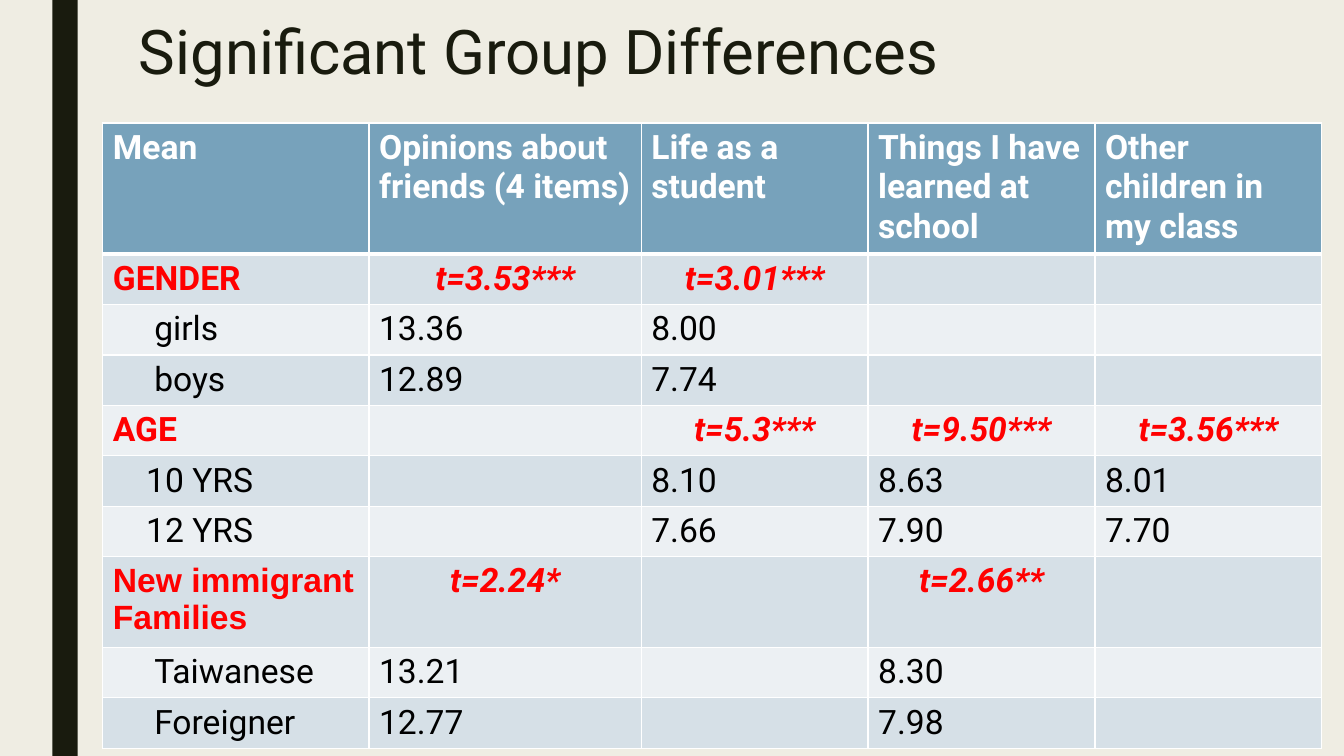
from pptx import Presentation
from pptx.dml.color import RGBColor
from pptx.enum.shapes import MSO_SHAPE
from pptx.enum.text import PP_ALIGN
from pptx.oxml import parse_xml
from pptx.oxml.ns import nsdecls
from pptx.util import Inches, Pt

RECT = MSO_SHAPE.RECTANGLE
LEFT, CENTER = PP_ALIGN.LEFT, PP_ALIGN.CENTER

CREAM = RGBColor(0xEF, 0xED, 0xE3)
INK = RGBColor(0x19, 0x1B, 0x0E)
BLUE = RGBColor(0x77, 0xA2, 0xBB)
BANDS = (RGBColor(0xEC, 0xF0, 0xF3), RGBColor(0xD6, 0xE0, 0xE7))
WHITE = RGBColor(0xFF, 0xFF, 0xFF)
BLACK = RGBColor(0, 0, 0)
RED = RGBColor(0xFF, 0, 0)

COLUMN_WIDTHS = (2.64, 2.7, 2.25, 2.25, 2.25)
HEADER_HEIGHT, ROW_HEIGHT, TALL_HEIGHT = 1.26, 0.49, 0.84
HEADER = ("Mean", "Opinions about friends (4 items)", "Life as a student",
          "Things I have learned at school", "Other children in my class")
GROUPS = (
    (("GENDER", "t=3.53***", "t=3.01***", "", ""), "Roboto", ROW_HEIGHT, 0.41,
     (("girls", "13.36", "8.00", "", ""),
      ("boys", "12.89", "7.74", "", ""))),
    (("AGE", "", "t=5.3***", "t=9.50***", "t=3.56***"), "Roboto", ROW_HEIGHT, 0.33,
     (("10 YRS", "", "8.10", "8.63", "8.01"),
      ("12 YRS", "", "7.66", "7.90", "7.70"))),
    (("New immigrant Families", "t=2.24*", "", "t=2.66**", ""), "Arial", TALL_HEIGHT, 0.41,
     (("Taiwanese", "13.21", "", "8.30", ""),
      ("Foreigner", "12.77", "", "7.98", ""))),
)


class SlideBuilder:
    """Draws styled elements on one slide."""

    def __init__(self, slide, font="Roboto"):
        self.s = slide
        self.font = font
        fill = slide.background.fill
        fill.solid()
        fill.fore_color.rgb = CREAM

    def text(self, tf, text, size, color, bold=False, italic=False, align=LEFT, font=None):
        p = tf.paragraphs[0]
        p.text = text
        p.alignment = align
        f = p.font
        f.name, f.size, f.bold, f.italic = font or self.font, Pt(size), bold, italic
        f.color.rgb = color
        return p

    def bar(self, x, y, w, h, color):
        sp = self.s.shapes.add_shape(RECT, Inches(x), Inches(y), Inches(w), Inches(h))
        sp.shadow.inherit = False
        sp.fill.solid()
        sp.fill.fore_color.rgb = color
        sp.line.fill.background()

    def title(self, x, y, w, h, text):
        tf = self.s.shapes.add_textbox(Inches(x), Inches(y), Inches(w), Inches(h)).text_frame
        tf.word_wrap = True
        self.text(tf, text, 44, INK).line_spacing = 0.89

    def table(self, x, y, widths, heights):
        frame = self.s.shapes.add_table(len(heights), len(widths), Inches(x), Inches(y),
                                        Inches(sum(widths)), Inches(sum(heights)))
        table = frame.table
        table.horz_banding = False
        for column, width in zip(table.columns, widths):
            column.width = Inches(width)
        for row, height in zip(table.rows, heights):
            row.height = Inches(height)
        return table

    def cell(self, cell, text, fill, color, top=1, bottom=1, indent=0, **style):
        tcPr = cell._tc.get_or_add_tcPr()
        for side, width in (("L", 1), ("R", 1), ("T", top), ("B", bottom)):
            tcPr.append(parse_xml(
                f'<a:ln{side} {nsdecls("a")} w="{Pt(width)}"><a:solidFill>'
                f'<a:srgbClr val="{WHITE}"/></a:solidFill></a:ln{side}>'))
        cell.fill.solid()
        cell.fill.fore_color.rgb = fill
        cell.margin_left = Inches(0.1 + indent)
        self.text(cell.text_frame, text, 24, color, **style)


def main():
    prs = Presentation()
    prs.slide_width, prs.slide_height = Inches(13.33), Inches(7.5)
    b = SlideBuilder(prs.slides.add_slide(prs.slide_layouts[6]))
    b.bar(0.52, 0, 0.25, 7.5, INK)
    b.title(1.28, 0.17, 11.08, 1.62, "Significant Group Differences")

    heights = [HEADER_HEIGHT]
    for _, _, height, _, members in GROUPS:
        heights += [height] + [ROW_HEIGHT] * len(members)
    table = b.table(1.02, 1.22, COLUMN_WIDTHS, heights)

    for c, text in enumerate(HEADER):
        b.cell(table.cell(0, c), text, BLUE, WHITE, bottom=3, bold=True)
    r = 1
    for heading, font, _, indent, members in GROUPS:
        for c, text in enumerate(heading):
            b.cell(table.cell(r, c), text, BANDS[r % 2], RED, top=3 if r == 1 else 1,
                   bold=True, italic=c > 0, align=CENTER if c else LEFT,
                   font=None if c else font)
        r += 1
        for member in members:
            for c, text in enumerate(member):
                b.cell(table.cell(r, c), text, BANDS[r % 2], BLACK,
                       indent=0 if c else indent)
            r += 1
    prs.save("out.pptx")


if __name__ == "__main__":
    main()
